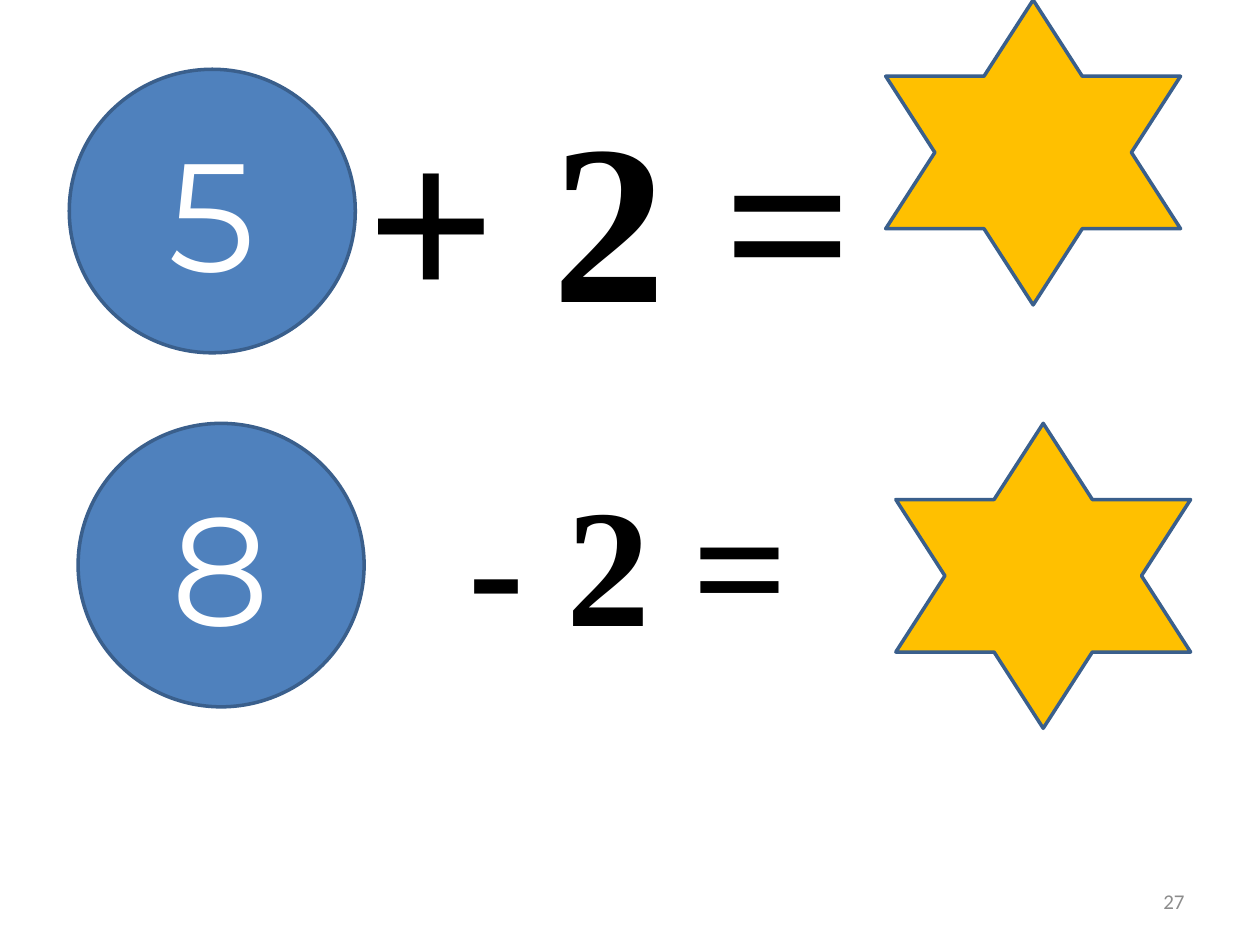
from dataclasses import dataclass
from pptx import Presentation
from pptx.dml.color import RGBColor
from pptx.enum.shapes import MSO_SHAPE
from pptx.enum.text import MSO_ANCHOR, PP_ALIGN
from pptx.util import Inches, Pt


@dataclass(frozen=True)
class Theme:
    """Colours, fonts and type sizes of the slide."""
    circle: str = "4F81BD"
    star: str = "FFC000"
    outline: str = "3A5F8C"
    digit: str = "FFFFFF"
    operation: str = "000000"
    muted: str = "8C8C8C"
    digit_font: str = "Montserrat"
    operation_font: str = "Times New Roman"
    page_font: str = "Calibri"
    digit_size: int = 88
    large_size: int = 130
    medium_size: int = 96
    page_size: int = 12
    outline_width: int = 2


@dataclass(frozen=True)
class Box:
    """A rectangle in inches."""
    left: float
    top: float
    width: float
    height: float

    def lengths(self):
        """Return the rectangle as slide lengths."""
        return [Inches(side) for side in (self.left, self.top, self.width, self.height)]


THEME = Theme()


def write(frame, text, font_name, size, color, bold=False,
          align=PP_ALIGN.LEFT, anchor=MSO_ANCHOR.TOP):
    """Set one styled paragraph in a text frame."""
    frame.word_wrap = True
    frame.vertical_anchor = anchor
    paragraph = frame.paragraphs[0]
    paragraph.text = text
    paragraph.alignment = align
    font = paragraph.font
    font.name, font.size, font.bold = font_name, Pt(size), bold
    font.color.rgb = RGBColor.from_string(color)


def add_figure(slide, box, preset, fill):
    """Add an outlined preset shape filling the box."""
    figure = slide.shapes.add_shape(preset, *box.lengths())
    figure.shadow.inherit = False
    figure.fill.solid()
    figure.fill.fore_color.rgb = RGBColor.from_string(fill)
    figure.line.color.rgb = RGBColor.from_string(THEME.outline)
    figure.line.width = Pt(THEME.outline_width)
    return figure


def add_equation(slide, box, digit, operation, operation_box, operation_size, star_top):
    """Add a sum: circle at the box's left, operation, and answer star at its right."""
    circle_width, star_width, star_height = 2.27, 2.34, 2.42
    operation_text = slide.shapes.add_textbox(*operation_box.lengths())
    write(operation_text.text_frame, operation, THEME.operation_font,
          operation_size, THEME.operation, bold=True)
    circle = add_figure(slide, Box(box.left, box.top, circle_width, box.height),
                        MSO_SHAPE.OVAL, THEME.circle)
    write(circle.text_frame, digit, THEME.digit_font, THEME.digit_size, THEME.digit,
          align=PP_ALIGN.CENTER, anchor=MSO_ANCHOR.MIDDLE)
    star_left = box.left + box.width - star_width
    add_figure(slide, Box(star_left, star_top, star_width, star_height),
               MSO_SHAPE.STAR_6_POINT, THEME.star)


def add_page_number(slide, box, number):
    """Add the page number, right-aligned in the box."""
    page_number = slide.shapes.add_textbox(*box.lengths())
    write(page_number.text_frame, number, THEME.page_font, THEME.page_size, THEME.muted,
          align=PP_ALIGN.RIGHT, anchor=MSO_ANCHOR.MIDDLE)


def main():
    """Build and save the slide."""
    deck = Presentation()
    deck.slide_width, deck.slide_height = Inches(10), Inches(7.5)
    slide = deck.slides.add_slide(deck.slide_layouts[6])
    add_equation(slide, Box(0.55, 0.55, 8.82, 2.25), "5", "+ 2 =",
                 Box(2.81, 0.55, 5.16, 2.29), THEME.large_size, star_top=0)
    add_equation(slide, Box(0.62, 3.36, 8.83, 2.25), "8", "- 2 =",
                 Box(3.62, 3.59, 2.76, 1.72), THEME.medium_size, star_top=3.36)
    add_page_number(slide, Box(7.17, 6.95, 2.33, 0.4), "27")
    deck.save("out.pptx")


if __name__ == "__main__":
    main()
